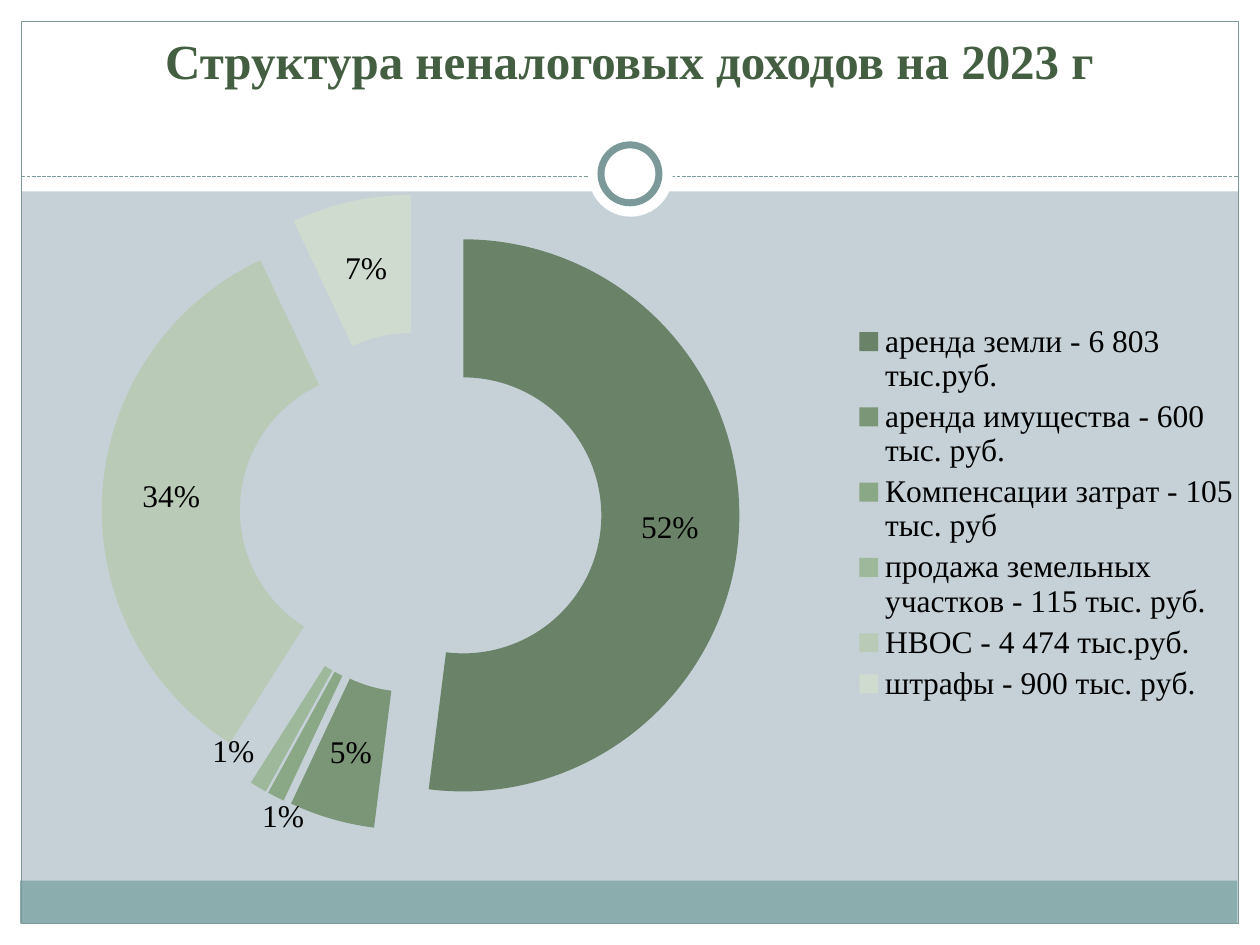
from lxml import etree
from pptx import Presentation
from pptx.chart import data as chart_data
from pptx.dml.color import RGBColor
from pptx.enum import chart as chart_enum, dml, shapes, text
from pptx.oxml import parse_xml
from pptx.oxml.ns import nsdecls, qn
from pptx.util import Inches, Pt


def color(hex_string):
    return RGBColor.from_string(hex_string)


def manual_layout(**values):
    """Return a c:layout element; values are fractions of the chart area."""
    children = "".join(f'<c:{name} val="{value}"/>' for name, value in values.items())
    return parse_xml(f'<c:layout {nsdecls("c")}><c:manualLayout>{children}</c:manualLayout></c:layout>')


presentation = Presentation()
presentation.slide_width, presentation.slide_height = Inches(10), Inches(7.5)
slide = presentation.slides.add_slide(presentation.slide_layouts[5])
slide.background.fill.solid()
slide.background.fill.fore_color.rgb = color("C5D1D7")

# Frame: preset, box, fill, line colour, line width
RECTANGLE, OVAL = shapes.MSO_SHAPE.RECTANGLE, shapes.MSO_SHAPE.OVAL
margins_and_bands = [
    (RECTANGLE, (0, 7.33, 10, 0.17), "FFFFFF", None, 0),
    (RECTANGLE, (0, 0, 10, 1.52), "FFFFFF", None, 0),
    (RECTANGLE, (0, 0, 0.17, 7.5), "FFFFFF", None, 0),
    (RECTANGLE, (9.83, 0, 0.17, 7.5), "FFFFFF", None, 0),
    (RECTANGLE, (0.16, 6.99, 9.66, 0.34), "8CADAE", None, 0),
    (RECTANGLE, (0.17, 0.17, 9.66, 7.16), None, "7C999A", 0.75),
]
circles = [
    (OVAL, (4.67, 1.05, 0.67, 0.67), "FFFFFF", None, 0),
    (OVAL, (4.77, 1.15, 0.46, 0.46), "FFFFFF", "7C999A", 4),
]

divider = slide.shapes.add_connector(
    shapes.MSO_CONNECTOR.STRAIGHT, Inches(0.17), Inches(1.4), Inches(9.83), Inches(1.4))
divider.line.color.rgb = color("7C999A")
divider.line.width = Pt(0.75)
divider.line.dash_style = dml.MSO_LINE.SQUARE_DOT
etree.SubElement(divider.line._get_or_add_ln().getparent(), qn("a:effectLst"))

for preset, box, fill, line, width in margins_and_bands + circles:
    if preset == OVAL and fill and not line:
        slide.shapes.element.append(divider.element)
    shape = slide.shapes.add_shape(preset, *map(Inches, box))
    shape.shadow.inherit = False
    if fill:
        shape.fill.solid()
        shape.fill.fore_color.rgb = color(fill)
    else:
        shape.fill.background()
    if line:
        shape.line.color.rgb = color(line)
        shape.line.width = Pt(width)
    else:
        shape.line.fill.background()

# Title, in front of the white band
title = slide.shapes.title
title.left, title.top, title.width, title.height = map(Inches, (0.33, 0.25, 9.33, 0.51))
title.text_frame.vertical_anchor = text.MSO_ANCHOR.BOTTOM
paragraph = title.text_frame.paragraphs[0]
paragraph.alignment = text.PP_ALIGN.CENTER
run = paragraph.add_run()
run.text = "Структура неналоговых доходов на 2023 г"
run.font.name, run.font.size, run.font.bold = "Times New Roman", Pt(28), True
run.font.color.rgb = color("435E40")
slide.shapes.element.append(title.element)

# Income chart: category, percent, slice colour
incomes = [
    ("аренда земли - 6 803 тыс.руб.", 52, "6A8268"),
    ("аренда имущества - 600 тыс. руб.", 5, "7B9677"),
    ("Компенсации затрат - 105 тыс. руб", 1, "8AA786"),
    ("продажа земельных участков - 115 тыс. руб.", 1, "9DB89A"),
    ("НВОС - 4 474 тыс.руб.", 34, "B9CAB7"),
    ("штрафы - 900 тыс. руб.", 7, "D0DBCF"),
]
data = chart_data.CategoryChartData()
data.categories = [name for name, _, _ in incomes]
data.add_series("Series 1", [percent for _, percent, _ in incomes])
chart = slide.shapes.add_chart(
    chart_enum.XL_CHART_TYPE.DOUGHNUT, *map(Inches, (0.33, 0.84, 9.55, 6.46)), data).chart
chart.has_title = False
chart.font.name, chart.font.size = "Cambria", Pt(18)
chart.font.color.rgb = color("000000")

chart.has_legend = True
chart.legend.position = chart_enum.XL_LEGEND_POSITION.RIGHT
chart.legend.include_in_layout = False
chart.legend.font.name, chart.legend.font.size = "Times New Roman", Pt(18)

series = chart.plots[0].series[0]
for index, (_, _, fill) in enumerate(incomes):
    slice_format = series.points[index].format
    slice_format.fill.solid()
    slice_format.fill.fore_color.rgb = color(fill)
    slice_format.line.fill.background()

labels = series.data_labels
labels.show_percentage, labels.show_value = True, False
labels.number_format, labels.number_format_is_linked = "0%", False
labels.font.name, labels.font.size = "Times New Roman", Pt(18)

# The two thin slices carry their labels outside the ring
for index, (x, y) in {2: (-0.02, 0.1), 3: (-0.05, 0.03)}.items():
    font = series.points[index].data_label.font
    font.name, font.size = "Times New Roman", Pt(18)
    label = chart.element.xpath(f".//c:dLbl[c:idx/@val={index}]")[0]
    label.find(qn("c:idx")).addnext(manual_layout(x=x, y=y))
    label.find(qn("c:showVal")).set("val", "0")
    label.find(qn("c:showPercent")).set("val", "1")

first_point = chart.element.xpath(".//c:dPt")[0]
first_point.addprevious(parse_xml(f'<c:explosion {nsdecls("c")} val="31"/>'))

plot_area = chart.element.xpath(".//c:plotArea")[0]
legend_position = chart.element.xpath(".//c:legendPos")[0]
for old_layout in chart.element.xpath(".//c:plotArea/c:layout | .//c:legend/c:layout"):
    old_layout.getparent().remove(old_layout)
plot_area.insert(0, manual_layout(
    layoutTarget="inner", xMode="edge", yMode="edge", x=0.05, y=0, w=0.53, h=1))
legend_position.addnext(manual_layout(
    xMode="edge", yMode="edge", x=0.67, y=0.26, w=0.33, h=0.48))

presentation.save("out.pptx")
